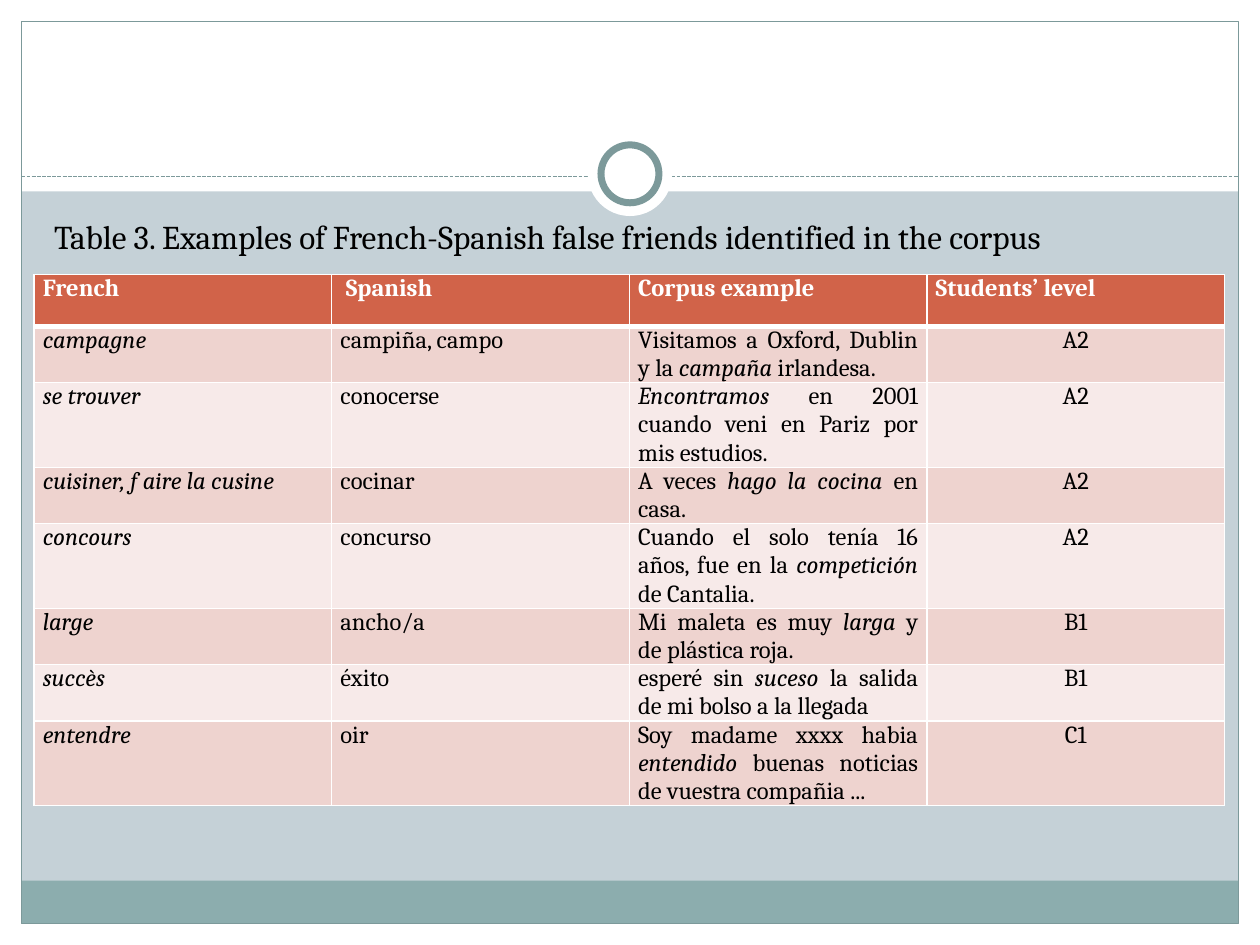
import dataclasses

import pptx
import pptx.dml.color
import pptx.enum.dml
import pptx.enum.shapes
import pptx.enum.text
import pptx.oxml
import pptx.oxml.ns
import pptx.util

Inches = pptx.util.Inches
Pt = pptx.util.Pt
Shape = pptx.enum.shapes.MSO_SHAPE
Align = pptx.enum.text.PP_ALIGN


@dataclasses.dataclass(frozen=True)
class Theme:
    font: str = "Cambria"
    caption_size: int = 19
    cell_size: int = 14
    backdrop: str = "C5D1D7"
    white: str = "FFFFFF"
    ink: str = "000000"
    footer: str = "8CADAE"
    outline: str = "7C999A"
    header: str = "D16349"
    bands: tuple = ("EED3CF", "F7EAE9")


THEME = Theme()
HEADINGS = ["French", " Spanish", "Corpus example", "Students’ level"]
FALSE_FRIENDS = [
    ("campagne", "campiña, campo",
     ("Visitamos a Oxford, Dublin y la ", "campaña", " irlandesa."), "A2"),
    ("se trouver", "conocerse",
     ("", "Encontramos", " en 2001 cuando veni en Pariz por mis estudios."), "A2"),
    ("cuisiner, f aire la cusine", "cocinar",
     ("A veces ", "hago la cocina", " en casa."), "A2"),
    ("concours", "concurso",
     ("Cuando el solo tenía 16 años, fue en la", " competición", " de Cantalia."), "A2"),
    ("large", "ancho/a",
     ("Mi maleta es muy ", "larga", " y de plástica roja."), "B1"),
    ("succès", "éxito",
     ("esperé sin ", "suceso", " la salida de mi bolso a la llegada"), "B1"),
    ("entendre", "oir",
     ("Soy madame xxxx habia ", "entendido ", "buenas noticias de vuestra compañia ..."), "C1"),
]


def rgb(value):
    return pptx.dml.color.RGBColor.from_string(value)


def add_span(para, text, size, color, bold=False, italic=False):
    span = para.add_run()
    span.text = text
    span.font.name = THEME.font
    span.font.size = Pt(size)
    span.font.bold = bold
    span.font.italic = italic
    span.font.color.rgb = rgb(color)


def add_panel(page, kind, box, fill=None, line=None, weight=0.75):
    panel = page.shapes.add_shape(kind, *map(Inches, box))
    panel.shadow.inherit = False
    if fill:
        panel.fill.solid()
        panel.fill.fore_color.rgb = rgb(fill)
    else:
        panel.fill.background()
    if line:
        panel.line.color.rgb = rgb(line)
        panel.line.width = Pt(weight)
    else:
        panel.line.fill.background()


def add_frame(page, box):
    left, top, width, height = box
    margin, banner, footer = 0.17, 1.52, 0.34
    right, bottom = left + width, top + height
    inner_width = width - 2 * margin
    for strip in [
        (left, bottom - margin, width, margin),
        (left, top, width, banner),
        (left, top, margin, height),
        (right - margin, top, margin, height),
    ]:
        add_panel(page, Shape.RECTANGLE, strip, THEME.white)
    add_panel(page, Shape.RECTANGLE,
              (left + margin, bottom - margin - footer, inner_width, footer), THEME.footer)
    add_panel(page, Shape.RECTANGLE,
              (left + margin, top + margin, inner_width, height - 2 * margin),
              line=THEME.outline)
    add_divider(page, (left + margin, top + 1.4, inner_width, 0))
    add_ring(page, left + width / 2, top + 1.38)


def add_divider(page, box):
    left, top, width, height = box
    divider = page.shapes.add_connector(
        pptx.enum.shapes.MSO_CONNECTOR.STRAIGHT,
        *map(Inches, (left, top, left + width, top + height)))
    divider.line.color.rgb = rgb(THEME.outline)
    divider.line.width = Pt(0.75)
    divider.line.dash_style = pptx.enum.dml.MSO_LINE.SQUARE_DOT
    properties = divider.element.find(pptx.oxml.ns.qn("p:spPr"))
    properties.append(pptx.oxml.parse_xml(
        f'<a:effectLst {pptx.oxml.ns.nsdecls("a")}/>'))


def add_ring(page, center_x, center_y):
    for size, line in [(0.67, None), (0.46, THEME.outline)]:
        box = (center_x - size / 2, center_y - size / 2, size, size)
        add_panel(page, Shape.OVAL, box, THEME.white, line, 4)


def place_caption(page, box):
    caption = page.shapes.title
    caption.left, caption.top, caption.width, caption.height = map(Inches, box)
    caption.element.getparent().append(caption.element)
    frame = caption.text_frame
    frame.word_wrap = True
    frame.auto_size = pptx.enum.text.MSO_AUTO_SIZE.NONE
    frame.vertical_anchor = pptx.enum.text.MSO_ANCHOR.TOP
    para = frame.paragraphs[0]
    para.alignment = Align.LEFT
    add_span(para, "Table 3. Examples of French-Spanish false friends identified in the corpus",
             THEME.caption_size, THEME.ink)


def set_borders(cell, top, bottom):
    properties = cell._tc.get_or_add_tcPr()
    for side, weight in [("L", 1), ("R", 1), ("T", top), ("B", bottom)]:
        properties.append(pptx.oxml.parse_xml(
            f'<a:ln{side} {pptx.oxml.ns.nsdecls("a")} w="{Pt(weight)}">'
            f'<a:solidFill><a:srgbClr val="{THEME.white}"/></a:solidFill></a:ln{side}>'))


def fill_cell(cell, spans, fill, color, alignment, bold=False):
    cell.margin_left = cell.margin_right = Inches(0.07)
    cell.margin_top = cell.margin_bottom = 0
    cell.fill.solid()
    cell.fill.fore_color.rgb = rgb(fill)
    para = cell.text_frame.paragraphs[0]
    para.alignment = alignment
    for text, italic in spans:
        if text:
            add_span(para, text, THEME.cell_size, color, bold, italic)


def add_word_table(page, box):
    row_count, column_count = len(FALSE_FRIENDS) + 1, len(HEADINGS)
    table = page.shapes.add_table(row_count, column_count, *map(Inches, box)).table
    for row_index in range(row_count):
        for cell in table.rows[row_index].cells:
            set_borders(cell, 3 if row_index == 1 else 1, 3 if row_index == 0 else 1)
    for cell, heading in zip(table.rows[0].cells, HEADINGS):
        fill_cell(cell, [(heading, False)], THEME.header, THEME.white, Align.JUSTIFY, True)
    for index, (french, spanish, example, level) in enumerate(FALSE_FRIENDS):
        before, error, after = example
        contents = [
            ([(french, True)], Align.JUSTIFY),
            ([(spanish, False)], Align.JUSTIFY),
            ([(before, False), (error, True), (after, False)], Align.JUSTIFY),
            ([(level, False)], Align.CENTER),
        ]
        for cell, (spans, alignment) in zip(table.rows[index + 1].cells, contents):
            fill_cell(cell, spans, THEME.bands[index % 2], THEME.ink, alignment)


def main():
    deck = pptx.Presentation()
    deck.slide_width, deck.slide_height = Inches(10), Inches(7.5)
    page = deck.slides.add_slide(deck.slide_layouts[5])
    page.background.fill.solid()
    page.background.fill.fore_color.rgb = rgb(THEME.backdrop)
    add_frame(page, (0, 0, 10, 7.5))
    place_caption(page, (0.33, 1.67, 9.3, 0.5))
    add_word_table(page, (0.27, 2.18, 9.45, 3.28))
    deck.save("out.pptx")


if __name__ == "__main__":
    main()
